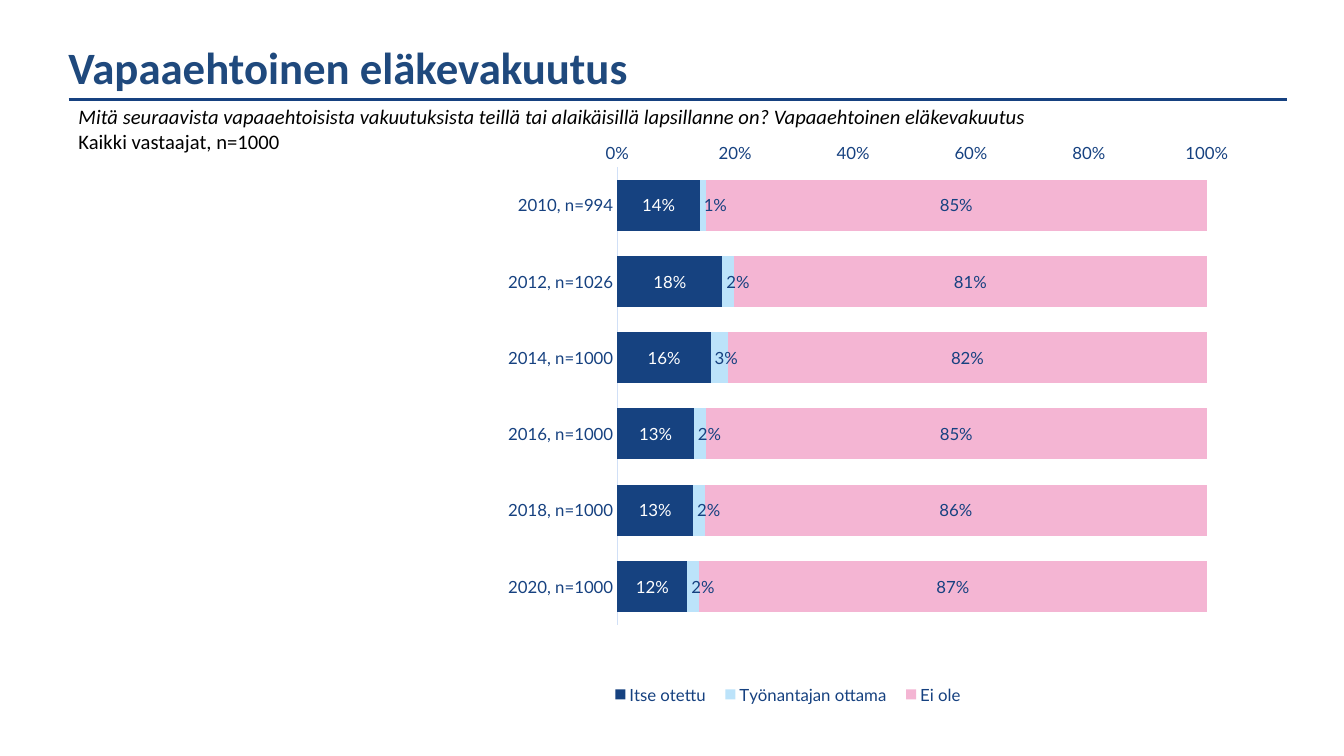
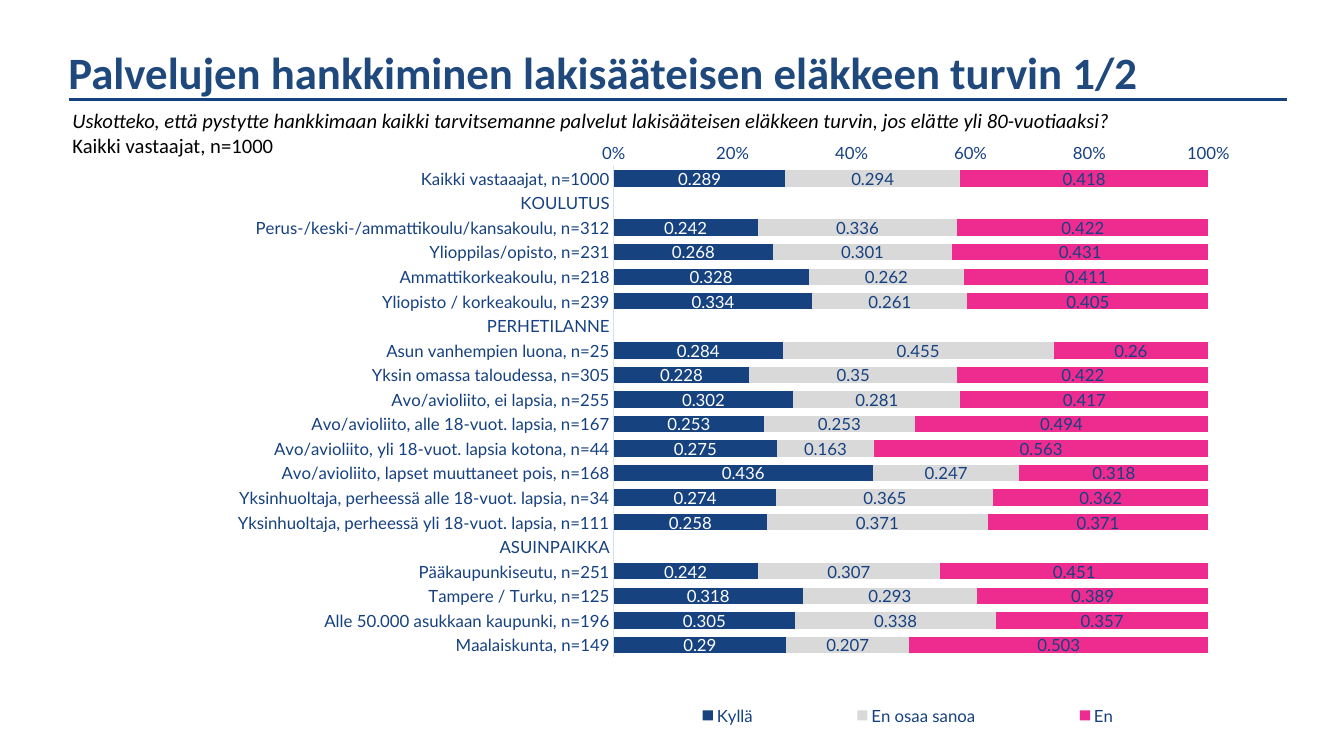
from lxml import etree
from pptx import Presentation
from pptx import util as u
from pptx.chart.data import CategoryChartData
from pptx.dml.color import RGBColor
from pptx.enum import chart as ch, shapes, text
from pptx.oxml import parse_xml
from pptx.oxml.ns import nsdecls, qn

NAVY, TITLE, BLACK, WHITE = "164180", "1F497D", "000000", "FFFFFF"
AXIS, BAR, SKY, ROSE, GREY, PINK = "D1E0F7", "164280", "BCE3FA", "F4B5D3", "D9D9D9", "EE2C90"
BODY, CHART = "Calibri", "Lato"
RULE = (0.68, 0.99, 12.76)

BASE = "Kaikki vastaajat, n=1000"
SLIDES = [
    dict(
        title="Vapaaehtoinen eläkevakuutus",
        title_at=(0.58, 0.45, 10.64, 0.54), title_spacing=0.8,
        question="Mitä seuraavista vapaaehtoisista vakuutuksista teillä tai alaikäisillä "
                 "lapsillanne on? Vapaaehtoinen eläkevakuutus",
        question_at=(0.68, 0.98, 10.88, 0.59),
        chart_at=(0.24, 1.29, 12.18, 6.02),
        plot=(0.483, 0.061, 0.48, 0.754), legend=(0.47, 0.9, 0.304, 0.06),
        series=[("Itse otettu", BAR), ("Työnantajan ottama", SKY), ("Ei ole", ROSE)],
        label_format="0%", base_series=1,
        rows=[
            ("2010, n=994", 0.14, 0.01, 0.85),
            ("2012, n=1026", 0.18, 0.02, 0.81),
            ("2014, n=1000", 0.16, 0.03, 0.82),
            ("2016, n=1000", 0.13, 0.02, 0.85),
            ("2018, n=1000", 0.13, 0.02, 0.86),
            ("2020, n=1000", 0.12, 0.02, 0.87),
        ],
    ),
    dict(
        title="Palvelujen hankkiminen lakisääteisen eläkkeen turvin 1/2",
        title_at=(0.58, 0.39, 12.6, 0.64), title_spacing=None,
        question="Uskotteko, että pystytte hankkimaan kaikki tarvitsemanne palvelut "
                 "lakisääteisen eläkkeen turvin, jos elätte yli 80-vuotiaaksi?",
        question_at=(0.62, 1.02, 12.13, 0.59),
        chart_at=(0.19, 1.28, 12.21, 6.06),
        plot=(0.483, 0.061, 0.483, 0.804), legend=(0.475, 0.93, 0.494, 0.06),
        series=[("Kyllä", BAR), ("En osaa sanoa", GREY), ("En", PINK)],
        label_format="General", base_series=None,
        rows=[
            ("Kaikki vastaaajat, n=1000", 0.289, 0.294, 0.418),
            ("KOULUTUS", None, None, None),
            ("Perus-/keski-/ammattikoulu/kansakoulu, n=312", 0.242, 0.336, 0.422),
            ("Ylioppilas/opisto, n=231", 0.268, 0.301, 0.431),
            ("Ammattikorkeakoulu, n=218", 0.328, 0.262, 0.411),
            ("Yliopisto / korkeakoulu, n=239", 0.334, 0.261, 0.405),
            ("PERHETILANNE", None, None, None),
            ("Asun vanhempien luona, n=25", 0.284, 0.455, 0.26),
            ("Yksin omassa taloudessa, n=305", 0.228, 0.35, 0.422),
            ("Avo/avioliito, ei lapsia, n=255", 0.302, 0.281, 0.417),
            ("Avo/avioliito, alle 18-vuot. lapsia, n=167", 0.253, 0.253, 0.494),
            ("Avo/avioliito, yli 18-vuot. lapsia kotona, n=44", 0.275, 0.163, 0.563),
            ("Avo/avioliito, lapset muuttaneet pois, n=168", 0.436, 0.247, 0.318),
            ("Yksinhuoltaja, perheessä alle 18-vuot. lapsia, n=34", 0.274, 0.365, 0.362),
            ("Yksinhuoltaja, perheessä yli 18-vuot. lapsia, n=111", 0.258, 0.371, 0.371),
            ("ASUINPAIKKA", None, None, None),
            ("Pääkaupunkiseutu, n=251", 0.242, 0.307, 0.451),
            ("Tampere / Turku, n=125", 0.318, 0.293, 0.389),
            ("Alle 50.000 asukkaan kaupunki, n=196", 0.305, 0.338, 0.357),
            ("Maalaiskunta, n=149", 0.29, 0.207, 0.503),
        ],
    ),
]


def rgb(color):
    return RGBColor.from_string(color)


def inches(values):
    return [u.Inches(v) for v in values]


def set_font(font, name, size, color, bold=False, italic=False):
    font.name, font.size, font.bold, font.italic = name, u.Pt(size), bold, italic
    font.color.rgb = rgb(color)


def add_text(s, at, lines, spacing=None):
    """Each line is (text, size, colour, bold, italic)."""
    tf = s.shapes.add_textbox(*inches(at)).text_frame
    tf.word_wrap = True
    tf.auto_size = text.MSO_AUTO_SIZE.SHAPE_TO_FIT_TEXT
    for i, (words, *style) in enumerate(lines):
        p = tf.add_paragraph() if i else tf.paragraphs[0]
        p.text = words
        p.line_spacing = spacing
        set_font(p.font, BODY, *style)


def add_rule(s):
    left, y, right = RULE
    line = s.shapes.add_connector(shapes.MSO_CONNECTOR.STRAIGHT, *inches((left, y, right, y)))
    line.line.color.rgb = rgb(NAVY)
    line.line.width = u.Pt(2.25)
    etree.SubElement(line._element.spPr, qn("a:effectLst"))


def manual_layout(box, inner=False):
    target = '<c:layoutTarget val="inner"/>' if inner else ""
    modes = "".join(f'<c:{k}Mode val="edge"/>' for k in "xy")
    sizes = "".join(f'<c:{k} val="{v}"/>' for k, v in zip("xywh", box))
    return parse_xml(f'<c:layout {nsdecls("c")}><c:manualLayout>{target}{modes}{sizes}'
                     "</c:manualLayout></c:layout>")


def place(parent, layout, index):
    for old in parent.findall(qn("c:layout")):
        parent.remove(old)
    parent.insert(index, layout)


def add_bars(s, spec_):
    labels, *columns = zip(*spec_["rows"])
    data = CategoryChartData()
    data.categories = labels
    for (name, _), values in zip(spec_["series"], columns):
        data.add_series(name, values)
    chart = s.shapes.add_chart(ch.XL_CHART_TYPE.BAR_STACKED_100,
                               *inches(spec_["chart_at"]), data).chart
    set_font(chart.font, CHART, 12, NAVY)
    chart.has_title = False

    cat, val = chart.category_axis, chart.value_axis
    for axis in (cat, val):
        axis.major_tick_mark = axis.minor_tick_mark = ch.XL_TICK_MARK.NONE
        axis.has_major_gridlines = False
    cat.reverse_order = True
    cat.crosses = ch.XL_AXIS_CROSSES.MAXIMUM
    cat.format.line.color.rgb = rgb(AXIS)
    cat.format.line.width = u.Pt(0.75)
    val.format.line.fill.background()
    val.minimum_scale, val.maximum_scale, val.major_unit = 0, 1, 0.2
    val.tick_labels.number_format = "0%"
    val.tick_labels.number_format_is_linked = False

    plot = chart.plots[0]
    plot.gap_width, plot.overlap, plot.vary_by_categories = 50, 100, False
    for i, (series, (_, color)) in enumerate(zip(plot.series, spec_["series"])):
        series.format.fill.solid()
        series.format.fill.fore_color.rgb = rgb(color)
        dl = series.data_labels
        dl.show_value = True
        dl.number_format, dl.number_format_is_linked = spec_["label_format"], False
        set_font(dl.font, CHART, 12, NAVY if i else WHITE)
        if i == spec_["base_series"]:
            dl.position = ch.XL_LABEL_POSITION.INSIDE_BASE

    chart.has_legend = True
    legend = chart.legend
    legend.position = ch.XL_LEGEND_POSITION.BOTTOM
    legend.include_in_layout = False
    place(legend._element, manual_layout(spec_["legend"]), 1)
    place(chart._chartSpace.chart.plotArea, manual_layout(spec_["plot"], inner=True), 0)


def main():
    prs = Presentation()
    prs.slide_width, prs.slide_height = inches((13.33, 7.5))
    for content in SLIDES:
        s = prs.slides.add_slide(prs.slide_layouts[6])
        add_bars(s, content)
        add_rule(s)
        add_text(s, content["title_at"], [(content["title"], 32, TITLE, True, False)],
                 content["title_spacing"])
        add_text(s, content["question_at"], [(content["question"], 14.7, BLACK, False, True),
                                             (BASE, 14.7, BLACK, False, False)])
    prs.save("out.pptx")


if __name__ == "__main__":
    main()
